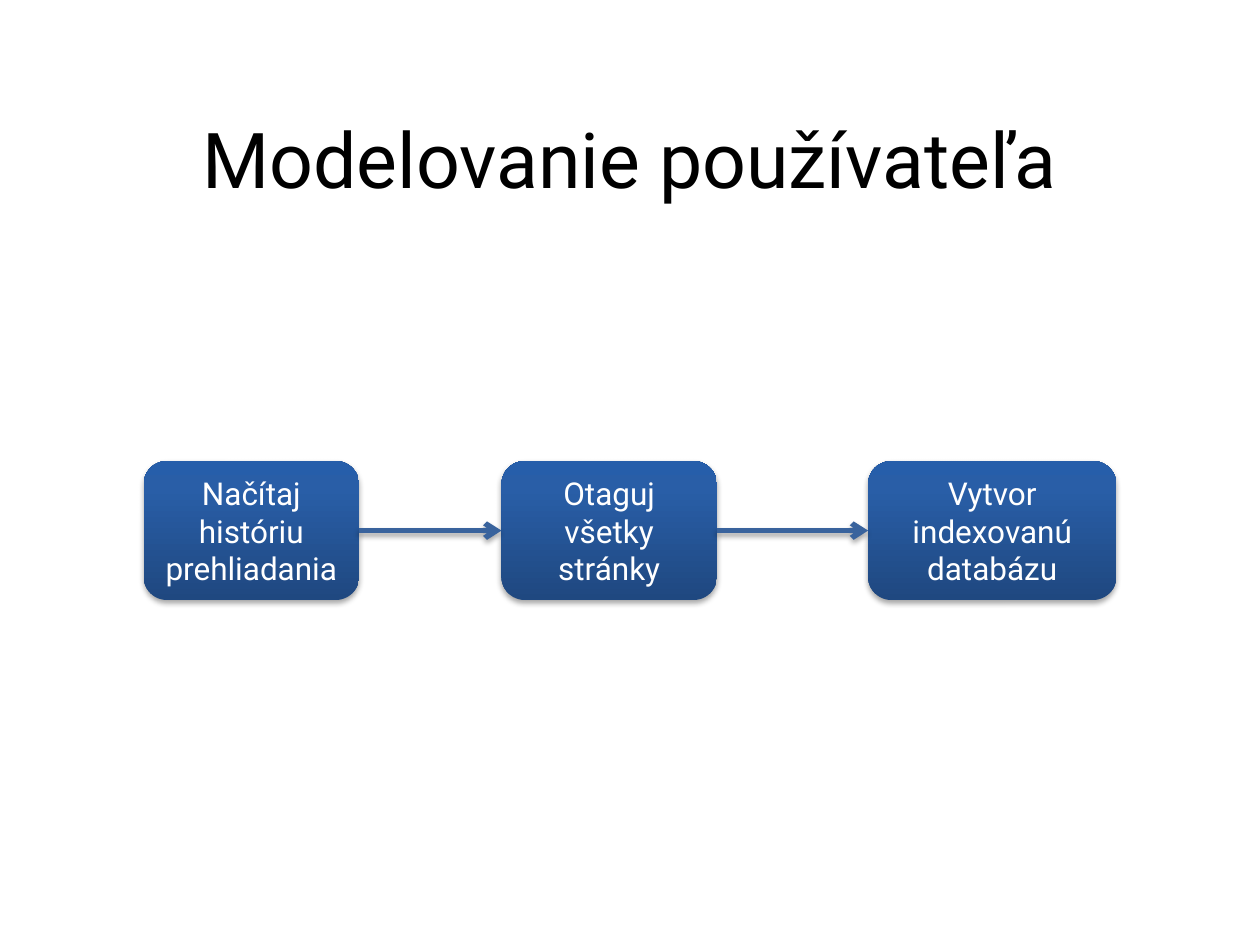
import copy
from dataclasses import dataclass

import pptx
import pptx.dml.color
import pptx.enum.shapes
import pptx.enum.text
import pptx.oxml
import pptx.oxml.ns
import pptx.util

WIDTH, HEIGHT = 10, 7.5
FONT = "Roboto"
COLORS = {
    "title": "000000",
    "label": "FFFFFF",
    "arrow": "39639D",
    "shadow": "000000",
    "box_bottom": "1F4880",
    "box_upper": "295EA7",
    "box_top": "265EAA",
}
GRADIENT = ((0, "box_bottom"), (0.8, "box_upper"), (1, "box_top"))

# Shared row of the flow, as shares of the slide height
ROW_TOP, ROW_HEIGHT = 0.488, 0.147


@dataclass
class Step:
    label: str
    left: float  # share of the slide width
    width: float


STEPS = [
    Step("Načítaj históriu prehliadania", 0.114, 0.171),
    Step("Otaguj všetky stránky", 0.398, 0.171),
    Step("Vytvor indexovanú databázu", 0.689, 0.197),
]


def across(share: float) -> int:
    return pptx.util.Inches(WIDTH * share)


def down(share: float) -> int:
    return pptx.util.Inches(HEIGHT * share)


def color(name: str) -> pptx.dml.color.RGBColor:
    return pptx.dml.color.RGBColor.from_string(COLORS[name])


def write(box, text: str, size: int, color_name: str) -> None:
    frame = box.text_frame
    frame.text = text
    frame.word_wrap = True
    frame.vertical_anchor = pptx.enum.text.MSO_ANCHOR.MIDDLE
    paragraph = frame.paragraphs[0]
    paragraph.alignment = pptx.enum.text.PP_ALIGN.CENTER
    span = paragraph.runs[0]
    span.font.name = FONT
    span.font.size = pptx.util.Pt(size)
    span.font.color.rgb = color(color_name)


def add_shadow(element) -> None:
    namespace = pptx.oxml.ns.nsdecls("a")
    element.spPr.append(pptx.oxml.parse_xml(
        f'<a:effectLst {namespace}>'
        '<a:outerShdw blurRad="40000" dist="23000" dir="5400000" rotWithShape="0">'
        f'<a:srgbClr val="{COLORS["shadow"]}"><a:alpha val="35000"/></a:srgbClr>'
        '</a:outerShdw></a:effectLst>'
    ))


def fill_gradient(box) -> None:
    box.fill.gradient()
    box.fill.gradient_angle = 90
    stop_list = box._element.spPr.find(".//" + pptx.oxml.ns.qn("a:gsLst"))
    stop_list.append(copy.deepcopy(stop_list[-1]))
    for stop, (position, name) in zip(box.fill.gradient_stops, GRADIENT):
        stop.position = position
        stop.color.rgb = color(name)


def add_step(page, step: Step):
    box = page.shapes.add_shape(
        pptx.enum.shapes.MSO_SHAPE.FLOWCHART_ALTERNATE_PROCESS,
        across(step.left), down(ROW_TOP), across(step.width), down(ROW_HEIGHT),
    )
    fill_gradient(box)
    box.line.fill.background()
    add_shadow(box._element)
    write(box, step.label, 18, "label")
    return box


def add_arrow(page, source, target) -> None:
    arrow = page.shapes.add_connector(
        pptx.enum.shapes.MSO_CONNECTOR.STRAIGHT, 0, 0, 0, 0)
    arrow.begin_connect(source, 3)
    arrow.end_connect(target, 1)
    arrow.line.width = pptx.util.Pt(3)
    arrow.line.color.rgb = color("arrow")
    head = pptx.oxml.parse_xml(
        f'<a:tailEnd {pptx.oxml.ns.nsdecls("a")} type="arrow"/>')
    arrow.line._get_or_add_ln().append(head)
    add_shadow(arrow._element)


def main() -> None:
    deck = pptx.Presentation()
    deck.slide_width, deck.slide_height = across(1), down(1)
    page = deck.slides.add_slide(deck.slide_layouts[6])

    # Title
    title = page.shapes.add_textbox(
        across(0.051), down(0.099), across(0.898), down(0.135))
    write(title, "Modelovanie používateľa", 44, "title")

    # Flow: the boxes, then an arrow between each pair of neighbours
    boxes = [add_step(page, step) for step in STEPS]
    for source, target in zip(boxes, boxes[1:]):
        add_arrow(page, source, target)

    deck.save("out.pptx")


if __name__ == "__main__":
    main()
